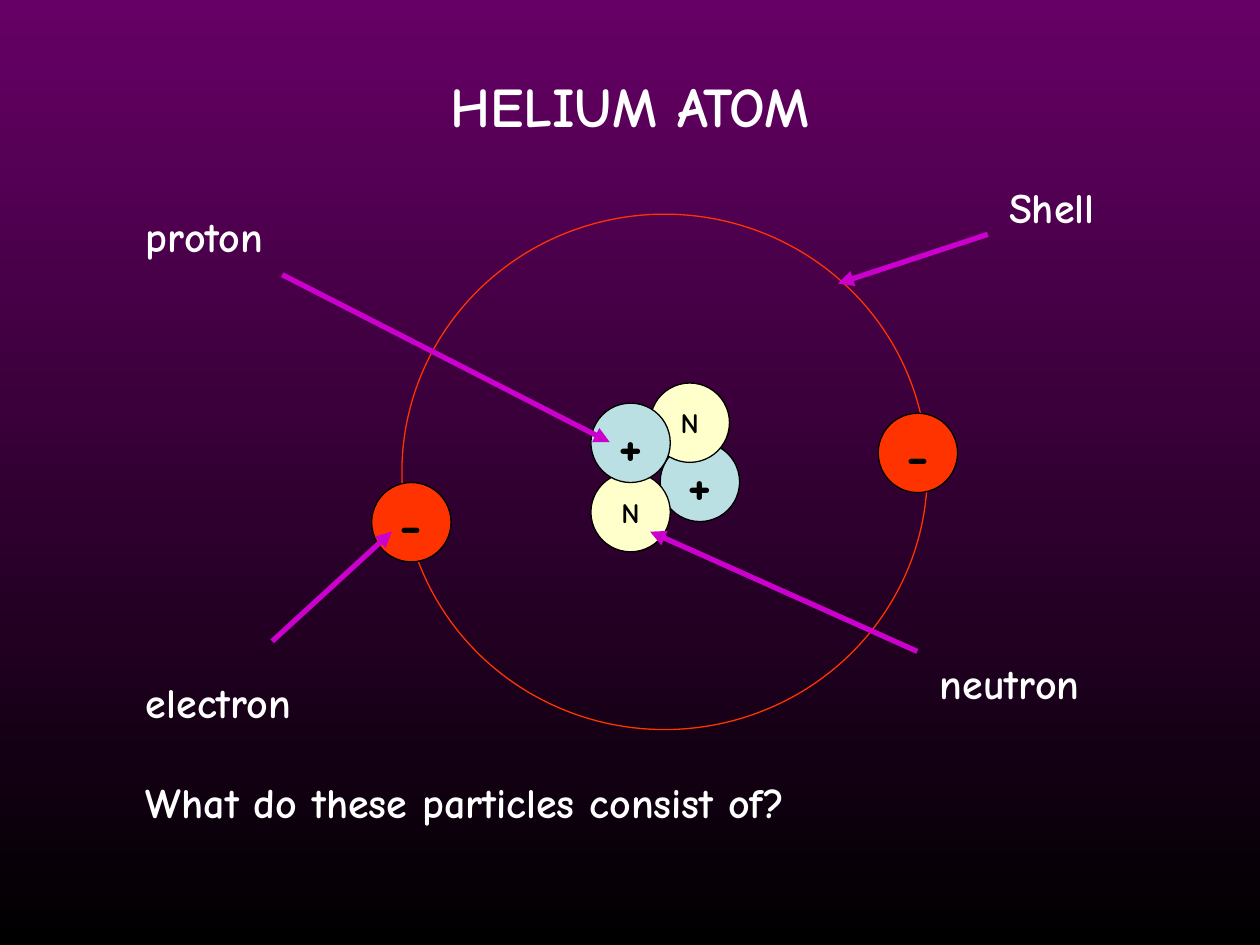
from lxml.etree import SubElement
from pptx import Presentation
from pptx.dml.color import RGBColor
from pptx.enum.shapes import MSO_CONNECTOR, MSO_SHAPE
from pptx.enum.text import MSO_ANCHOR, MSO_AUTO_SIZE, PP_ALIGN
from pptx.oxml.ns import qn
from pptx.util import Inches, Pt

PURPLE = RGBColor(0x66, 0x00, 0x66)
BLACK = RGBColor(0x00, 0x00, 0x00)
WHITE = RGBColor(0xFF, 0xFF, 0xFF)
RED = RGBColor(0xFF, 0x33, 0x00)
BLUE = RGBColor(0xBB, 0xE0, 0xE3)
CREAM = RGBColor(0xFF, 0xFF, 0xCC)
PINK = RGBColor(0xCC, 0x00, 0xCC)


def write(frame, text, size=24, color=WHITE, align=PP_ALIGN.LEFT, font="Comic Neue"):
    line = frame.paragraphs[0]
    line.alignment = align
    run = line.add_run()
    run.text = text
    run.font.name = font
    run.font.size = Pt(size)
    run.font.bold = True
    run.font.color.rgb = color


class Atom:
    """Holds the style and the current slide of the atom diagram."""

    ball = 0.63
    thin = Pt(0.75)
    thick = Pt(3)

    def __init__(self, slide):
        self.slide = slide

    def shade(self, top, base):
        fill = self.slide.background.fill
        fill.gradient()
        fill.gradient_angle = 270
        for stop, color in zip(fill.gradient_stops, (top, base)):
            stop.color.rgb = color

    def ring(self, left, top, width, height, color):
        oval = self.slide.shapes.add_shape(
            MSO_SHAPE.OVAL, Inches(left), Inches(top), Inches(width), Inches(height))
        oval.shadow.inherit = False
        oval.fill.background()
        oval.line.color.rgb = color
        oval.line.width = self.thin
        return oval

    def bead(self, left, top, sign, size, color):
        oval = self.ring(left, top, self.ball, self.ball, BLACK)
        oval.fill.solid()
        oval.fill.fore_color.rgb = color
        frame = oval.text_frame
        frame.word_wrap = False
        frame.vertical_anchor = MSO_ANCHOR.MIDDLE
        write(frame, sign, size=size, color=BLACK, align=PP_ALIGN.CENTER)

    def label(self, left, top, width, text, height=0.5, **style):
        box = self.slide.shapes.add_textbox(
            Inches(left), Inches(top), Inches(width), Inches(height))
        box.text_frame.word_wrap = True
        box.text_frame.auto_size = MSO_AUTO_SIZE.SHAPE_TO_FIT_TEXT
        write(box.text_frame, text, **style)

    def arrow(self, *ends):
        link = self.slide.shapes.add_connector(
            MSO_CONNECTOR.STRAIGHT, *[Inches(end) for end in ends])
        link.line.color.rgb = PINK
        link.line.width = self.thick
        SubElement(link.line._get_or_add_ln(), qn("a:tailEnd"), type="triangle")
        SubElement(link._element.spPr, qn("a:effectLst"))


def main():
    deck = Presentation()
    deck.slide_width, deck.slide_height = Inches(10), Inches(7.5)
    atom = Atom(deck.slides.add_slide(deck.slide_layouts[6]))
    atom.shade(PURPLE, BLACK)
    atom.ring(3.19, 1.7, 4.17, 4.09, RED)
    atom.label(0, 0.52, 10, "HELIUM ATOM", height=0.63, size=32, align=PP_ALIGN.CENTER)

    proton, neutron, electron = ("+", 32, BLUE), ("N", 16, CREAM), ("-", 32, RED)
    for left, top, kind in (
        (5.24, 3.51, proton),
        (5.16, 3.04, neutron),
        (4.69, 3.75, neutron),
        (4.69, 3.2, proton),
        (2.95, 3.83, electron),
        (6.97, 3.28, electron),
    ):
        atom.bead(left, top, *kind)

    for left, top, width, text, ends in (
        (1.06, 1.62, 1.34, "proton", (2.24, 2.18, 4.84, 3.51)),
        (1.06, 5.32, 1.58, "electron", (2.16, 5.09, 3.11, 4.22)),
        (7.36, 5.17, 1.81, "neutron", (7.28, 5.17, 5.16, 4.22)),
        (7.91, 1.39, 1.18, "Shell", (7.84, 1.86, 6.65, 2.25)),
    ):
        atom.label(left, top, width, text)
        atom.arrow(*ends)

    atom.label(1.06, 6.11, 8.11, "What do these particles consist of?")
    deck.save("out.pptx")


if __name__ == "__main__":
    main()
